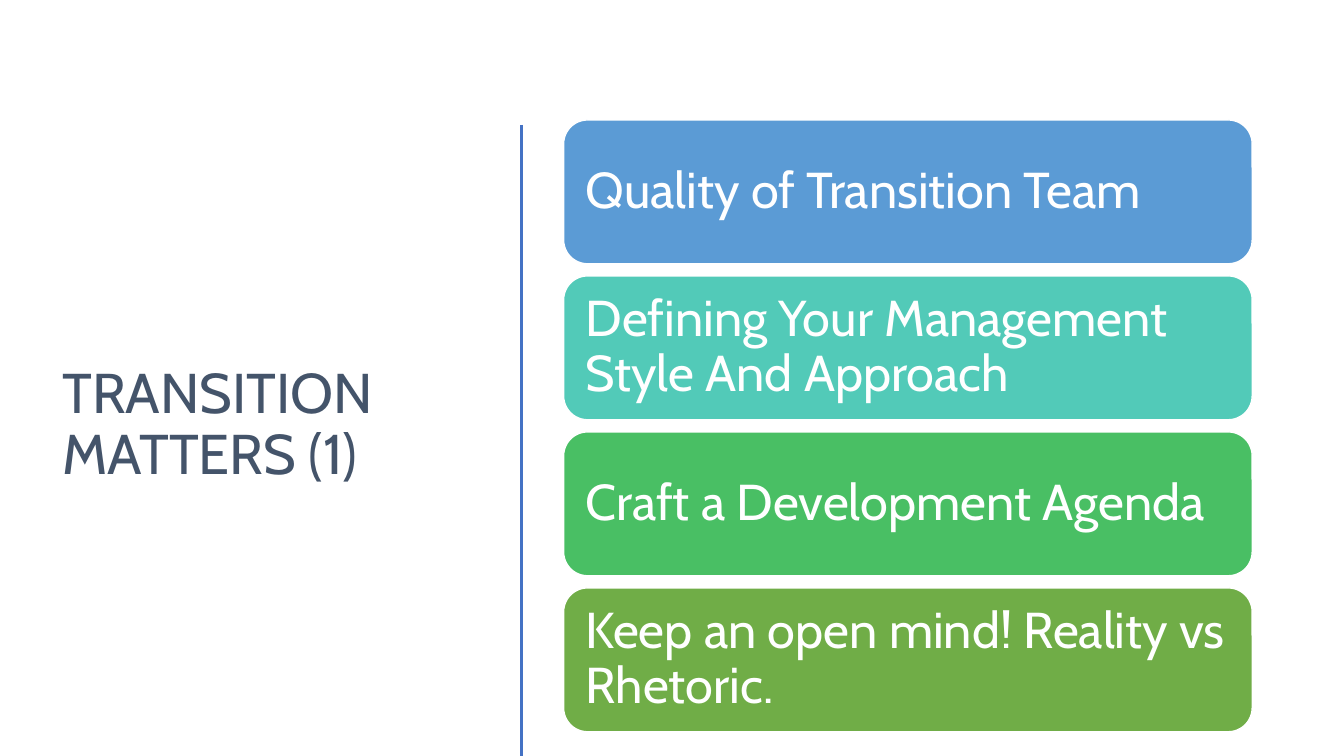
from dataclasses import dataclass

from lxml import etree
from pptx import Presentation
from pptx.dml.color import RGBColor
from pptx.enum.shapes import MSO_CONNECTOR, MSO_SHAPE
from pptx.enum.text import MSO_ANCHOR, PP_ALIGN
from pptx.oxml.ns import qn
from pptx.util import Inches, Pt

ROUNDED = MSO_SHAPE.ROUNDED_RECTANGLE
STRAIGHT = MSO_CONNECTOR.STRAIGHT
MIDDLE = MSO_ANCHOR.MIDDLE
LEFT = PP_ALIGN.LEFT


@dataclass(frozen=True)
class Theme:
    font: str = "Cabin"
    title_size: int = 40
    card_size: int = 36
    line_spacing: float = 0.9
    title: str = "44546A"
    rule: str = "4472C4"
    white: str = "FFFFFF"


THEME = Theme()
SLIDE_W, SLIDE_H = 13.33, 7.5
CARD_GAP = 0.12
CARDS = [
    ("Quality of Transition Team", "5B9BD5"),
    ("Defining Your Management Style And Approach", "52CAB8"),
    ("Craft a Development Agenda", "49BF64"),
    ("Keep an open mind! Reality vs Rhetoric.", "70AD47"),
]


def rgb(value):
    return RGBColor.from_string(value)


def write(shape, text, size, color, inset):
    tf = shape.text_frame
    tf.word_wrap = True
    tf.vertical_anchor = MIDDLE
    tf.margin_left = tf.margin_right = Inches(inset)
    tf.margin_top = tf.margin_bottom = Inches(inset)
    p = tf.paragraphs[0]
    p.alignment = LEFT
    p.line_spacing = THEME.line_spacing
    r = p.add_run()
    r.text = text
    r.font.name = THEME.font
    r.font.size = Pt(size)
    r.font.color.rgb = rgb(color)


def add_title(s, box, text):
    tb = s.shapes.add_textbox(*map(Inches, box))
    write(tb, text, THEME.title_size, THEME.title, 0.1)


def add_rule(s, x, top, bottom):
    line = s.shapes.add_connector(STRAIGHT, *map(Inches, (x, top, x, bottom)))
    line.line.color.rgb = rgb(THEME.rule)
    line.line.width = Pt(2)
    etree.SubElement(line._element.spPr, qn("a:effectLst"))


def add_cards(s, box, cards):
    left, top, width, height = box
    card_h = (height - CARD_GAP * (len(cards) - 1)) / len(cards)
    for i, (text, fill) in enumerate(cards):
        y = top + i * (card_h + CARD_GAP)
        sp = s.shapes.add_shape(ROUNDED, *map(Inches, (left, y, width, card_h)))
        sp.shadow.inherit = False
        sp.fill.solid()
        sp.fill.fore_color.rgb = rgb(fill)
        sp.line.color.rgb = rgb(THEME.white)
        sp.line.width = Pt(1)
        write(sp, text, THEME.card_size, THEME.white, 0.15)


def main():
    prs = Presentation()
    prs.slide_width, prs.slide_height = Inches(SLIDE_W), Inches(SLIDE_H)
    s = prs.slides.add_slide(prs.slide_layouts[6])

    # Title on the left, divider, then the stack of cards
    add_title(s, (0.52, 1.17, 4.31, 6.11), "TRANSITION MATTERS (1)")
    add_rule(s, 5.17, 1.24, SLIDE_H)
    add_cards(s, (5.59, 1.19, 6.83, 6.07), CARDS)

    prs.save("out.pptx")


if __name__ == "__main__":
    main()
